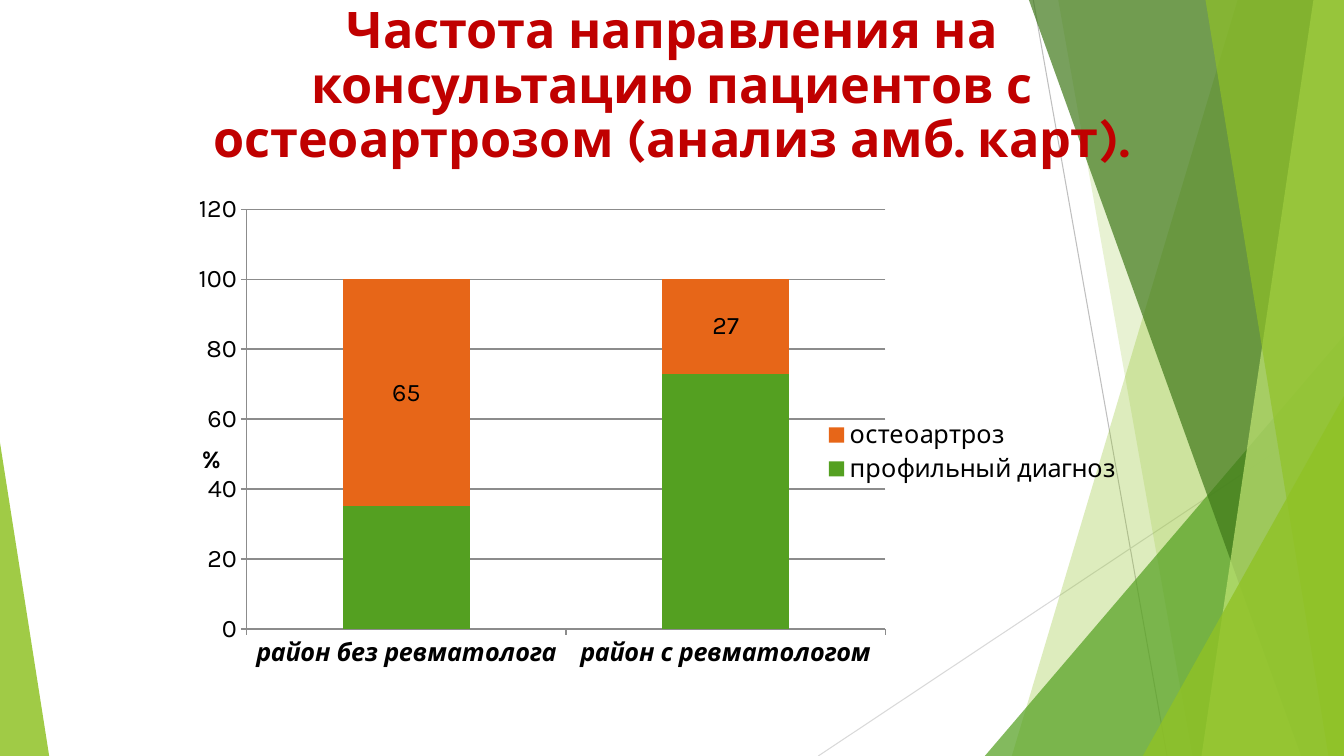
from lxml import etree
from pptx import Presentation
from pptx import util as u
from pptx.chart import data as chart_data
from pptx.dml import color
from pptx.enum import chart as ch, shapes, text
from pptx.oxml import ns

COLORS = {
    "title": "C00000", "text": "000000", "axis": "8C8C8C",
    "lime": "90C226", "green": "54A021", "forest": "3F7819", "pale": "C0E474",
    "orange": "E76618", "ray": "BFBFBF", "light_ray": "D9D9D9",
}
FONT = "Karla"
WIDTH, HEIGHT = u.Cm(33.87), u.Cm(19.05)


def rgb(name):
    """Return a palette colour."""
    return color.RGBColor.from_string(COLORS[name])


def style_font(font, size, name="text", bold=False, italic=False):
    """Apply typeface, size, colour and weight."""
    font.name, font.size = FONT, u.Pt(size)
    font.color.rgb = rgb(name)
    font.bold, font.italic = bold, italic


def paint_facet(facet, name, alpha):
    """Give a facet a translucent fill without outline or shadow."""
    facet.shadow.inherit = False
    facet.line.fill.background()
    facet.fill.solid()
    facet.fill.fore_color.rgb = rgb(name)
    tint = facet.fill._xPr.find(".//" + ns.qn("a:srgbClr"))
    etree.SubElement(tint, ns.qn("a:alpha")).set("val", str(alpha * 1000))


def add_ray(slide, start, end, name):
    """Draw one thin background line."""
    ray = slide.shapes.add_connector(shapes.MSO_CONNECTOR.STRAIGHT, *start, *end)
    ray.line.color.rgb, ray.line.width = rgb(name), u.Pt(0.75)
    etree.SubElement(ray._element.spPr, ns.qn("a:effectLst"))


def add_band(slide, box, upper, lower, name, alpha):
    """Fill from a slanted left edge to the right side of the box."""
    left, top, width, height = box
    right, bottom = left + width, top + height
    outline = slide.shapes.build_freeform(left + u.Cm(upper), top)
    outline.add_line_segments([(right, top), (right, bottom), (left + u.Cm(lower), bottom)])
    paint_facet(outline.convert_to_shape(), name, alpha)


def add_corner(slide, box, across, peak, apex, name, alpha):
    """Stand a right triangle on the bottom of the box, against its side."""
    left, top, width, height = box
    x = left + (width - u.Cm(across)) * apex
    corner = slide.shapes.add_shape(
        shapes.MSO_SHAPE.ISOSCELES_TRIANGLE, x, top + u.Cm(peak),
        u.Cm(across), height - u.Cm(peak))
    corner.adjustments[0] = apex
    paint_facet(corner, name, alpha)


def add_backdrop(slide, box):
    """Draw the faceted background."""
    left, top, width, height = box
    right, bottom = left + width, top + height
    add_ray(slide, (left + u.Cm(26.04), top), (left + u.Cm(29.41), bottom), "ray")
    add_ray(slide, (right, top + u.Cm(10.24)), (left + u.Cm(20.62), bottom), "light_ray")
    add_band(slide, box, 31.19, 25.5, "lime", 30)
    add_band(slide, box, 26.67, 30.05, "lime", 20)
    add_corner(slide, box, 9.05, 8.46, 1, "green", 72)
    add_band(slide, box, 25.93, 32.79, "forest", 70)
    add_band(slide, box, 33.1, 30.28, "pale", 70)
    add_band(slide, box, 30.38, 33.48, "lime", 65)
    add_corner(slide, box, 5.07, 9.98, 1, "lime", 80)
    add_corner(slide, box, 1.24, 11.15, 0, "lime", 85)


def add_title(slide, box):
    """Place the heading in front of the backdrop."""
    title = slide.shapes.title
    title.left, title.top, title.width, title.height = box
    title._element.getparent().append(title._element)
    frame = title.text_frame
    frame.word_wrap, frame.auto_size = True, text.MSO_AUTO_SIZE.NONE
    frame.vertical_anchor = text.MSO_ANCHOR.TOP
    heading = frame.paragraphs[0]
    heading.alignment, heading.line_spacing = text.PP_ALIGN.CENTER, 0.9
    lines = ("Частота направления на", "консультацию пациентов с",
             "остеоартрозом (анализ амб. карт).")
    for number, line in enumerate(lines):
        if number:
            heading.add_line_break()
        run = heading.add_run()
        run.text = line
        style_font(run.font, 36, "title", bold=True)


def set_layout(part, index, inner=False, **fractions):
    """Fix a chart part at fractions of the chart area."""
    for old in part.findall(ns.qn("c:layout")):
        part.remove(old)
    layout = etree.Element(ns.qn("c:layout"))
    manual = etree.SubElement(layout, ns.qn("c:manualLayout"))
    settings = [("layoutTarget", "inner")] if inner else []
    settings += [("xMode", "edge"), ("yMode", "edge"), *fractions.items()]
    for tag, value in settings:
        etree.SubElement(manual, ns.qn("c:" + tag)).set("val", str(value))
    part.insert(index, layout)


def style_axis(axis, **weight):
    """Format tick labels, ticks and the axis line."""
    axis.major_tick_mark = ch.XL_TICK_MARK.OUTSIDE
    axis.minor_tick_mark = ch.XL_TICK_MARK.NONE
    axis.format.line.color.rgb, axis.format.line.width = rgb("axis"), u.Pt(1)
    style_font(axis.tick_labels.font, 18, **weight)


def add_referral_chart(slide, box):
    """Add the stacked columns of referral shares."""
    shares = chart_data.CategoryChartData(number_format="General")
    shares.categories = ["район без ревматолога", "район с ревматологом"]
    shares.add_series("профильный диагноз", (35, 73))
    shares.add_series("остеоартроз", (65, 27))
    chart = slide.shapes.add_chart(ch.XL_CHART_TYPE.COLUMN_STACKED, *box, shares).chart
    chart.has_title = False
    style_font(chart.font, 18)

    plot = chart.plots[0]
    plot.gap_width, plot.overlap, plot.vary_by_categories = 150, 100, False
    for series, name in zip(plot.series, ("green", "orange")):
        series.format.fill.solid()
        series.format.fill.fore_color.rgb = rgb(name)
    labels = plot.series[1].data_labels
    labels.show_value = True
    style_font(labels.font, 18)

    style_axis(chart.category_axis, bold=True, italic=True)
    percent = chart.value_axis
    style_axis(percent)
    percent.minimum_scale, percent.maximum_scale, percent.major_unit = 0, 120, 20
    percent.has_major_gridlines = True
    grid = percent.major_gridlines.format.line
    grid.color.rgb, grid.width = rgb("axis"), u.Pt(1)
    unit = percent.axis_title
    run = unit.text_frame.paragraphs[0].add_run()
    run.text = "%"
    style_font(run.font, 18, bold=True)
    unit._element.find(".//" + ns.qn("a:bodyPr")).set("rot", "0")

    chart.has_legend = True
    legend = chart.legend
    legend.position, legend.include_in_layout = ch.XL_LEGEND_POSITION.RIGHT, False
    style_font(legend.font, 18)
    set_layout(chart._chartSpace.chart.plotArea, 0, True, x=0.082, y=0.059, w=0.667, h=0.754)
    set_layout(unit._element, 1, x=0.03, y=0.47)
    set_layout(legend._element, 1, x=0.68, y=0.43, w=0.32, h=0.13)


def main():
    """Build and save the slide."""
    deck = Presentation()
    deck.slide_width, deck.slide_height = WIDTH, HEIGHT
    slide = deck.slides.add_slide(deck.slide_layouts[5])
    add_backdrop(slide, (0, 0, WIDTH, HEIGHT))
    add_title(slide, (u.Cm(4.24), 0, u.Cm(25.4), u.Cm(3.94)))
    add_referral_chart(slide, (u.Cm(4.24), u.Cm(4.45), u.Cm(24.13), u.Cm(14.02)))
    deck.save("out.pptx")


if __name__ == "__main__":
    main()
